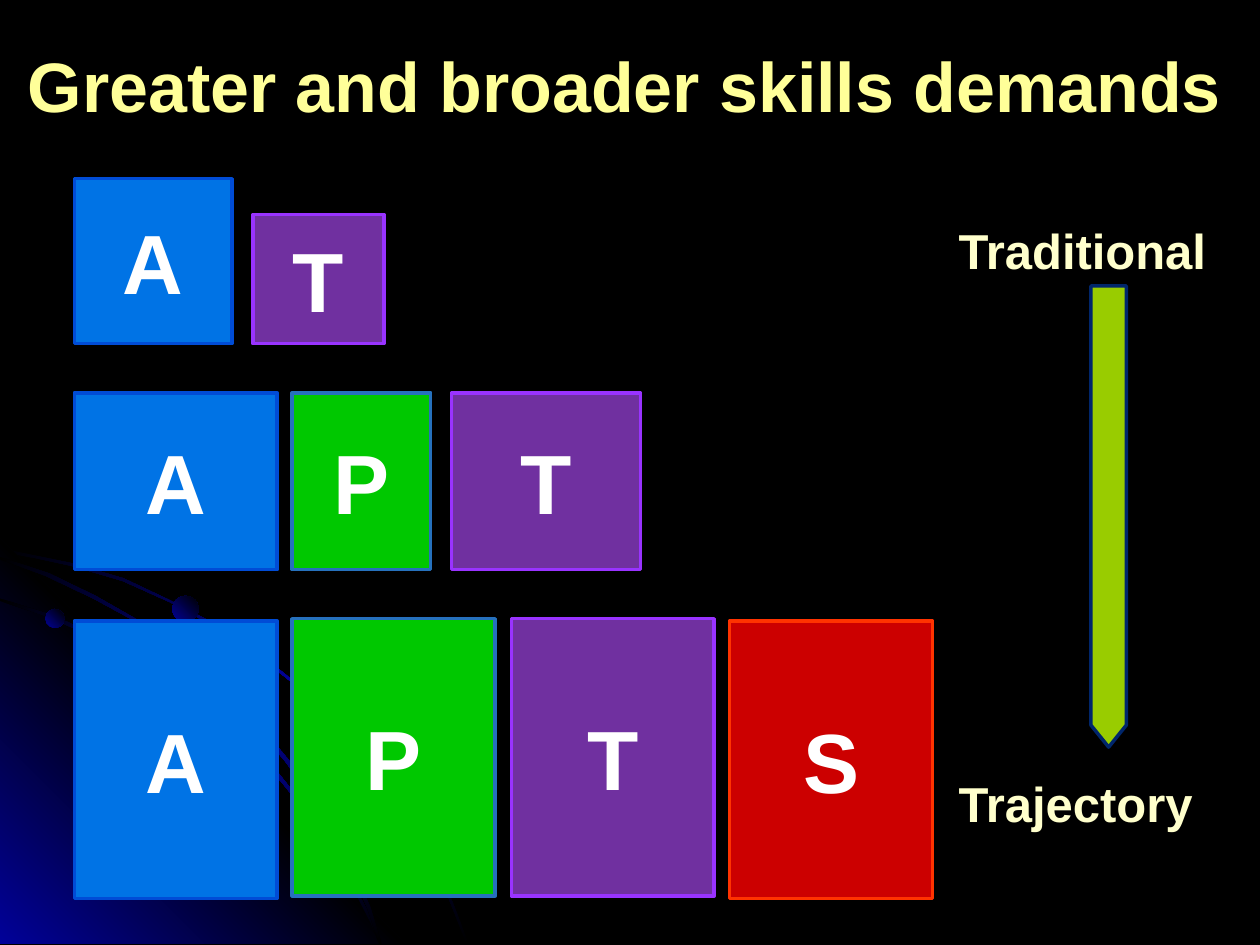
from copy import deepcopy

from pptx import Presentation
from pptx.dml.color import RGBColor
from pptx.enum.shapes import MSO_SHAPE
from pptx.enum.text import MSO_ANCHOR, MSO_AUTO_SIZE, PP_ALIGN
from pptx.oxml.ns import qn
from pptx.util import Pt

SKILL_COLOURS = {
    "A": ("0073E5", "004CD6"),
    "P": ("00C800", "2671BD"),
    "T": ("7030A0", "9933FF"),
    "S": ("CC0000", "FF3300"),
}
GRID = Pt(0.72)
BLUE, BLACK = "010199", "000000"
RIBBONS = [
    [(57, 447), (28, 441), (0, 435), (0, 438), (28, 443), (56, 449), (97, 461),
     (135, 478), (173, 499), (208, 523), (241, 549), (271, 579), (298, 612),
     (323, 649), (337, 673), (350, 698), (360, 723), (370, 749), (372, 749),
     (362, 723), (352, 698), (339, 673), (325, 648), (300, 611), (272, 578),
     (242, 548), (209, 521), (174, 497), (136, 477), (98, 459)],
    [(285, 714), (294, 732), (301, 749), (303, 749), (296, 730), (286, 712),
     (266, 676), (242, 640), (215, 606), (184, 576), (152, 549), (117, 526),
     (79, 505), (41, 488), (0, 475), (0, 477), (39, 490), (77, 507), (115, 528),
     (150, 551), (183, 578), (213, 608), (240, 641), (265, 677)],
    [(0, 442), (0, 444), (36, 457), (74, 475), (109, 494), (142, 518), (173, 544),
     (202, 575), (227, 605), (252, 641), (267, 667), (280, 694), (292, 722),
     (301, 749), (303, 749), (294, 720), (282, 693), (269, 665), (254, 639),
     (229, 603), (204, 573), (175, 543), (144, 516), (111, 493), (76, 473),
     (39, 455)],
]
CORNER = [(322, 749), (0, 749), (0, 427)]


def colour(value):
    return RGBColor.from_string(value)


def apply_format(target, values):
    for name, value in values.items():
        setattr(target, name, value)


def write_text(shape, text, size, text_colour, alignment=PP_ALIGN.LEFT, anchor=MSO_ANCHOR.TOP):
    frame = shape.text_frame
    apply_format(frame, {"word_wrap": True, "auto_size": MSO_AUTO_SIZE.NONE, "vertical_anchor": anchor})
    paragraph = frame.paragraphs[0]
    paragraph.text = text
    paragraph.alignment = alignment
    apply_format(paragraph.font, {"name": "Arial", "size": Pt(size), "bold": True})
    paragraph.font.color.rgb = colour(text_colour)


def style_shape(shape, fill, line):
    shape.shadow.inherit = False
    shape.fill.solid()
    shape.fill.fore_color.rgb = colour(fill)
    shape.line.color.rgb = colour(line)
    shape.line.width = Pt(2)


def style_gradient(shape, colours, angle):
    shape.shadow.inherit = False
    shape.line.fill.background()
    shape.fill.gradient()
    shape.fill.gradient_angle = angle
    stop_list = shape._element.spPr.find(".//" + qn("a:gsLst"))
    for _ in colours[2:]:
        stop_list.append(deepcopy(stop_list[-1]))
    for index, (stop, value) in enumerate(zip(shape.fill.gradient_stops, colours)):
        stop.position = index / (len(colours) - 1)
        stop.color.rgb = colour(value)


def add_outline(slide, points, colours, angle):
    builder = slide.shapes.build_freeform(*points[0], scale=GRID)
    builder.add_line_segments(points[1:], close=True)
    style_gradient(builder.convert_to_shape(), colours, angle)


def add_corner_art(slide):
    ribbon_colours = (BLACK, BLUE, BLACK)
    add_outline(slide, RIBBONS[0], ribbon_colours, 315)
    add_outline(slide, CORNER, (BLUE, BLACK, BLUE), 45)
    for ribbon in RIBBONS[1:]:
        add_outline(slide, ribbon, ribbon_colours, 315)
    for left, top, size in ((26, 348, 10.8), (98.5, 340.5, 15)):
        ball = slide.shapes.add_shape(MSO_SHAPE.OVAL, Pt(left), Pt(top), Pt(size), Pt(size))
        style_gradient(ball, (BLUE, BLACK), 45)


def add_title(slide, left, top, width, height):
    title = slide.shapes.title
    apply_format(title, {"left": Pt(left), "top": Pt(top), "width": Pt(width), "height": Pt(height)})
    write_text(title, "Greater and broader skills demands", 40, "FFFF99")


def add_skill_row(slide, bottom, skills):
    for letter, left, width, height in skills:
        box = slide.shapes.add_shape(
            MSO_SHAPE.RECTANGLE, Pt(left), Pt(bottom - height), Pt(width), Pt(height))
        style_shape(box, *SKILL_COLOURS[letter])
        write_text(box, letter, 48, "FFFFFF", PP_ALIGN.CENTER, MSO_ANCHOR.MIDDLE)


def add_trajectory(slide, left, top, width, height):
    label_height = 41
    for text, label_top in (("Traditional", top), ("Trajectory", top + height - label_height)):
        label = slide.shapes.add_textbox(Pt(left), Pt(label_top), Pt(width), Pt(label_height))
        write_text(label, text, 28, "FFFFCC")
    length, thickness = 263.5, 20.2
    centre_x, centre_y = left + 92.8, top + 172.8
    arrow = slide.shapes.add_shape(
        MSO_SHAPE.PENTAGON, Pt(centre_x - length / 2), Pt(centre_y - thickness / 2),
        Pt(length), Pt(thickness))
    arrow.rotation = 90
    arrow.adjustments[0] = 0.62
    style_shape(arrow, "99CC00", "00266B")


def main():
    presentation = Presentation()
    presentation.slide_width, presentation.slide_height = Pt(720), Pt(540)
    slide = presentation.slides.add_slide(presentation.slide_layouts[5])
    slide.background.fill.solid()
    slide.background.fill.fore_color.rgb = colour(BLACK)

    add_corner_art(slide)
    add_title(slide, 8.6, 20.9, 702.8, 55.4)
    first, second, wide = 42.5, 167, 116
    add_skill_row(slide, 196.4, [("A", first, 90, 94.3), ("T", 144.5, 75, 73.8)])
    add_skill_row(slide, 325.5, [
        ("A", first, wide, 101), ("P", second, 79.2, 101), ("T", 258, 108, 101)])
    add_skill_row(slide, 513.4, [("A", first, wide, 158.4), ("S", 416.9, wide, 158.4)])
    add_skill_row(slide, 512, [("P", second, wide, 158.4), ("T", 292.2, wide, 158.4)])
    add_trajectory(slide, 540.7, 122.4, 165, 357)
    presentation.save("out.pptx")


if __name__ == "__main__":
    main()
